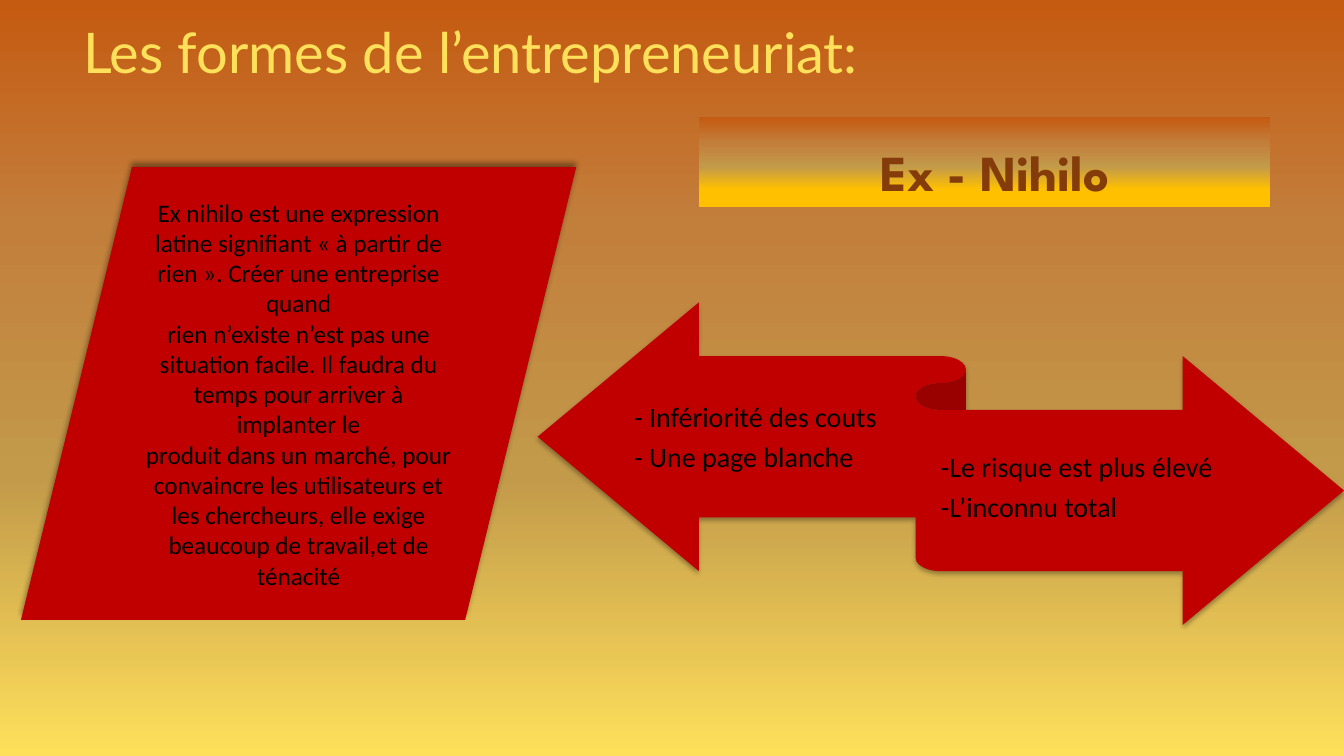
from dataclasses import dataclass

from lxml.etree import SubElement
from pptx import Presentation
from pptx.dml.color import RGBColor as Rgb
from pptx.enum.shapes import MSO_SHAPE as Kind
from pptx.enum.text import MSO_ANCHOR as Anchor, MSO_AUTO_SIZE as Auto, PP_ALIGN as Align
from pptx.oxml.ns import qn
from pptx.util import Inches, Pt


@dataclass(frozen=True)
class Theme:
    # Colours
    red: str = "C00000"
    ink: str = "000000"
    gold: str = "FFE05B"
    brown: str = "843C0B"
    back: tuple = ((0, "C55A11"), (30, "C27F3C"), (63, "C29A4A"), (100, "FFE05B"))
    band: tuple = ((0, "C55A11"), (30, "C27F3C"), (55, "C29A4A"), (80, "FFC000"))
    # Type
    font: str = "Calibri"
    title: str = "Lato"
    head: str = "League Spartan"
    big: int = 40
    mid: int = 36
    note: int = 20
    body: int = 18


def write(frame, *lines, font, size, color, bold=False, align=Align.LEFT,
          anchor=Anchor.MIDDLE, space=1.0, after=0, left=None, right=None):
    """Fill a text frame with one paragraph per line."""
    frame.word_wrap = True
    frame.auto_size = Auto.NONE
    frame.vertical_anchor = anchor
    if left is not None:
        frame.margin_left = left
    if right is not None:
        frame.margin_right = right
    for i, line in enumerate(lines):
        para = frame.add_paragraph() if i else frame.paragraphs[0]
        para.alignment = align
        para.line_spacing = space
        para.space_before, para.space_after = Pt(0), Pt(after)
        run = para.add_run()
        run.text = line
        run.font.name, run.font.size, run.font.bold = font, Pt(size), bold
        run.font.color.rgb = Rgb.from_string(color)


class Deck:
    """Holds the theme and the slide, on a grid of 160 columns by 90 rows."""

    def __init__(self, theme):
        self.theme = theme
        self.show = Presentation()
        self.show.slide_width, self.show.slide_height = Inches(13.33), Inches(7.5)
        self.slide = self.show.slides.add_slide(self.show.slide_layouts[5])
        self.blend(self.slide.background.fill, self.slide.element, theme.back)

    def cols(self, n):
        return int(self.show.slide_width * n / 160)

    def rows(self, n):
        return int(self.show.slide_height * n / 90)

    def box(self, x, y, w, h):
        return self.cols(x), self.rows(y), self.cols(w), self.rows(h)

    def blend(self, fill, node, stops):
        """Set a gradient that runs from top to bottom."""
        fill.gradient()
        fill.gradient_angle = 270
        ramp = node.find(".//" + qn("a:gsLst"))
        ramp.clear()
        for at, color in stops:
            stop = SubElement(ramp, qn("a:gs"), pos=str(at * 1000))
            SubElement(stop, qn("a:srgbClr"), val=color)

    def title(self, text, *place):
        t, item = self.theme, self.slide.shapes.title
        item.left, item.top, item.width, item.height = self.box(*place)
        write(item.text_frame, text, font=t.title, size=t.big, color=t.gold,
              space=0.9, left=self.cols(2.9))

    def shape(self, kind, *place, shade=None):
        """Add a red shape; shade is alpha in percent, blur, distance, angle."""
        item = self.slide.shapes.add_shape(kind, *self.box(*place))
        item.fill.solid()
        item.fill.fore_color.rgb = Rgb.from_string(self.theme.red)
        item.line.fill.background()
        item.shadow.inherit = False
        if shade:
            alpha, blur, dist, angle = shade
            glow = SubElement(item.element.spPr.find(qn("a:effectLst")), qn("a:outerShdw"),
                              blurRad=str(Pt(blur)), dist=str(Pt(dist)),
                              dir=str(angle * 60000), algn="ctr", rotWithShape="0")
            tint = SubElement(glow, qn("a:srgbClr"), val=self.theme.ink)
            SubElement(tint, qn("a:alpha"), val=str(alpha * 1000))
        return item

    def band(self, text, *place):
        t, item = self.theme, self.shape(Kind.RECTANGLE, *place)
        self.blend(item.fill, item.element, t.band)
        write(item.text_frame, text, font=t.head, size=t.mid, color=t.brown, bold=True,
              anchor=Anchor.BOTTOM, space=0.9, left=self.cols(21.6))

    def note(self, lines, *place):
        t, item = self.theme, self.slide.shapes.add_textbox(*self.box(*place))
        write(item.text_frame, *lines, font=t.font, size=t.note, color=t.ink,
              space=0.9, after=7, left=0, right=0)

    def panel(self, lines, *place):
        t = self.theme
        item = self.shape(Kind.FLOWCHART_DATA, *place, shade=(40, 4, 3, 270))
        write(item.text_frame, *lines, font=t.font, size=t.body, color=t.ink,
              align=Align.CENTER)


def main():
    deck = Deck(Theme())

    # Headings
    deck.title("Les formes de l’entrepreneuriat:", 7, 1.3, 138, 10.7)
    deck.band("Ex - Nihilo", 83.2, 13.9, 68, 10.8)

    # Ribbon with both sides of the choice
    deck.shape(Kind.LEFT_RIGHT_RIBBON, 64, 36, 96, 38.4, shade=(32, 3.5, 2.2, 90))
    deck.note(["- Infériorité des couts", "- Une page blanche"], 75.5, 44.5, 31.7, 15.4)
    deck.note(["-Le risque est plus élevé", "-L’inconnu total"], 112, 48.8, 37.4, 18.8)

    # Definition
    deck.panel([
        "Ex nihilo est une expression latine signifiant « à partir de rien ». "
        "Créer une entreprise quand",
        "rien n’existe n’est pas une situation facile. "
        "Il faudra du temps pour arriver à implanter le",
        "produit dans un marché, pour convaincre les utilisateurs et les chercheurs, "
        "elle exige beaucoup de travail,et de ténacité",
    ], 2.5, 19.9, 66.1, 53.9)

    deck.show.save("out.pptx")


if __name__ == "__main__":
    main()
